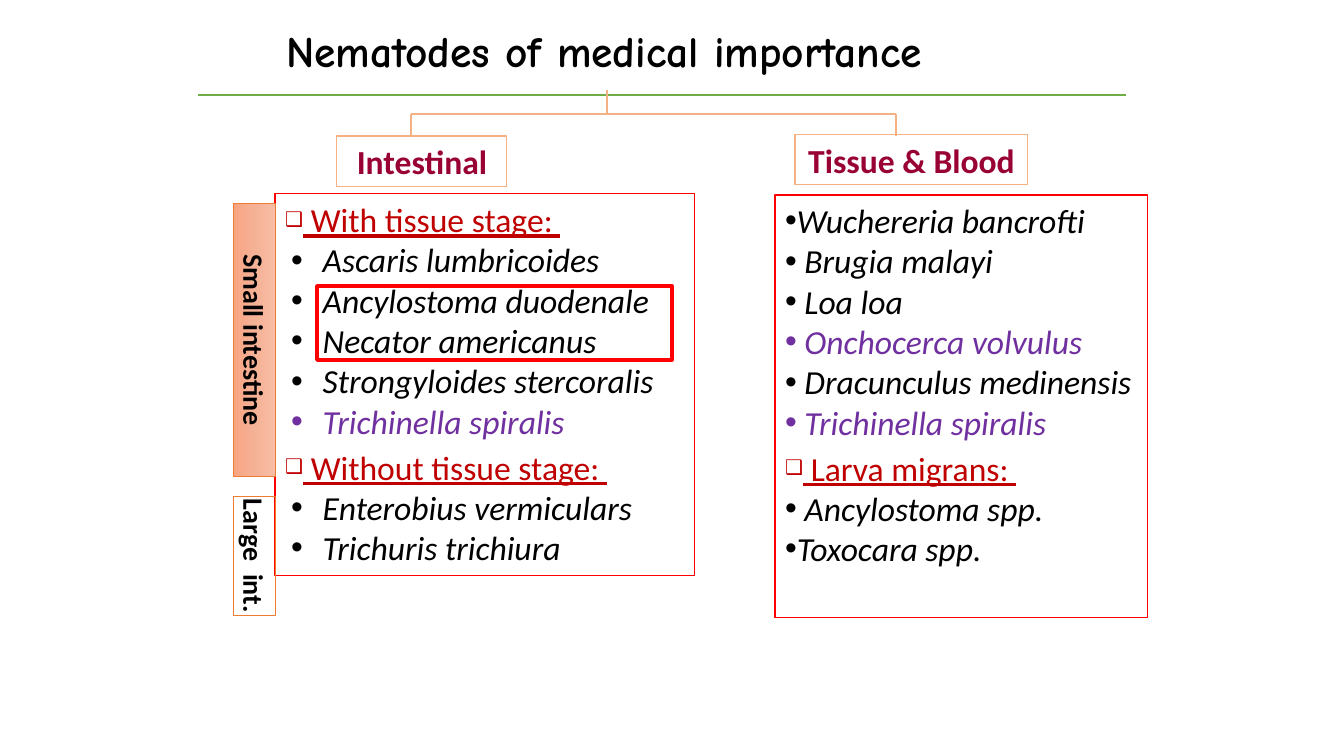
from copy import deepcopy
from dataclasses import dataclass
from typing import Any, NamedTuple

from lxml import etree
from pptx import Presentation, util as u
from pptx.dml.color import RGBColor
from pptx.enum import shapes, text
from pptx.oxml.ns import qn

BLACK = RGBColor(0x00, 0x00, 0x00)
RED = RGBColor(0xFF, 0x00, 0x00)
DARK_RED = RGBColor(0xC0, 0x00, 0x00)
MAROON = RGBColor(0x99, 0x00, 0x33)
PURPLE = RGBColor(0x70, 0x30, 0xA0)
GREEN = RGBColor(0x70, 0xAD, 0x47)
PEACH = RGBColor(0xF4, 0xB1, 0x83)
ORANGE = RGBColor(0xED, 0x7D, 0x31)
SITE_GRADIENT = [
    (0, RGBColor(0xF7, 0xBD, 0xA5)),
    (0.5, RGBColor(0xF5, 0xB1, 0x96)),
    (1, RGBColor(0xF8, 0xA5, 0x82)),
]
EMU_PER_PX = 914400 / 100.8


class Rect(NamedTuple):
    left: int
    top: int
    width: int
    height: int


class Line(NamedTuple):
    x1: int
    y1: int
    x2: int
    y2: int
    color: RGBColor = PEACH
    weight: float = 2


@dataclass
class Box:
    rect: Rect
    line: RGBColor
    weight: float
    label: str = ""
    size: int = 24
    color: RGBColor = BLACK
    rotation: int = 0
    gradient: bool = False


@dataclass
class Item:
    label: str
    color: RGBColor = BLACK
    heading: bool = False


@dataclass
class SpeciesList:
    idx: int
    rect: Rect
    items: list[Item]
    margin: int = 0
    indent: int = 0


LINES = [
    Line(198, 95, 1126, 95, GREEN, 1),
    Line(411, 114, 896, 114),
    Line(411, 114, 411, 136),
    Line(896, 114, 896, 136),
    Line(607, 90, 607, 114),
]
BOXES = [
    Box(Rect(337, 136, 170, 51), PEACH, 0.75, "Intestinal", color=MAROON),
    Box(Rect(795, 135, 233, 50), PEACH, 0.75, "Tissue & Blood", color=MAROON),
    Box(Rect(118, 319, 273, 42), ORANGE, 0.5, "Small intestine", 20,
        rotation=90, gradient=True),
    Box(Rect(195, 535, 119, 42), ORANGE, 1.25, "Large  int.", 20, rotation=90),
    Box(Rect(317, 286, 355, 74), RED, 2.5),
]
LISTS = [
    SpeciesList(1, Rect(275, 194, 420, 382), [
        Item(" With tissue stage: ", DARK_RED, True),
        Item(" Ascaris lumbricoides"),
        Item(" Ancylostoma duodenale"),
        Item(" Necator americanus"),
        Item(" Strongyloides stercoralis"),
        Item(" Trichinella spiralis", PURPLE),
        Item(" Without tissue stage: ", DARK_RED, True),
        Item(" Enterobius vermiculars"),
        Item(" Trichuris trichiura"),
    ], margin=30, indent=-24),
    SpeciesList(2, Rect(775, 195, 373, 423), [
        Item("Wuchereria bancrofti"),
        Item(" Brugia malayi"),
        Item(" Loa loa"),
        Item(" Onchocerca volvulus", PURPLE),
        Item(" Dracunculus medinensis"),
        Item(" Trichinella spiralis", PURPLE),
        Item(" Larva migrans: ", DARK_RED, True),
        Item(" Ancylostoma spp."),
        Item("Toxocara spp."),
    ]),
]


def px(value: int) -> int:
    return u.Emu(round(value * EMU_PER_PX))


def set_all(target: Any, values: dict[str, Any]) -> None:
    for name, value in values.items():
        setattr(target, name, value)


def place(sp: Any, rect: Rect) -> None:
    set_all(sp, {name: px(v) for name, v in rect._asdict().items()})


def outline(sp: Any, color: RGBColor, weight: float) -> None:
    sp.line.color.rgb = color
    sp.line.width = u.Pt(weight)


def add_run(p: Any, label: str, color: RGBColor, fmt: dict[str, Any]) -> None:
    r = p.add_run()
    r.text = label
    set_all(r.font, fmt)
    r.font.color.rgb = color


def add_line(s: Any, line: Line) -> None:
    cn = s.shapes.add_connector(shapes.MSO_CONNECTOR.STRAIGHT,
                                *map(px, line[:4]))
    outline(cn, line.color, line.weight)
    etree.SubElement(cn._element.spPr, qn("a:effectLst"))


def fill_gradient(sp: Any) -> None:
    sp.fill.gradient()
    sp.fill.gradient_angle = 270
    first = sp.fill._xPr.find(qn("a:gradFill")).find(qn("a:gsLst"))[0]
    first.addnext(deepcopy(first))
    for stop, (position, color) in zip(sp.fill.gradient_stops, SITE_GRADIENT):
        stop.position = position
        stop.color.rgb = color


def add_box(s: Any, box: Box) -> None:
    sp = s.shapes.add_shape(shapes.MSO_SHAPE.RECTANGLE, *map(px, box.rect))
    sp.shadow.inherit = False
    sp.rotation = box.rotation
    if box.gradient:
        fill_gradient(sp)
    else:
        sp.fill.background()
    outline(sp, box.line, box.weight)
    if box.label:
        tf = sp.text_frame
        set_all(tf, {"word_wrap": False, "margin_left": px(1),
                     "margin_right": px(1), "margin_top": px(4),
                     "margin_bottom": px(4),
                     "vertical_anchor": text.MSO_ANCHOR.MIDDLE})
        p = tf.paragraphs[0]
        p.alignment = text.PP_ALIGN.CENTER
        add_run(p, box.label, box.color,
                {"name": "Calibri", "size": u.Pt(box.size), "bold": True})


def set_bullet(p: Any, heading: bool, margin: int, indent: int) -> None:
    pPr = p._p.get_or_add_pPr()
    pPr.set("marL", str(px(margin)))
    pPr.set("indent", str(px(indent)))
    if heading:
        etree.SubElement(pPr, qn("a:buSzPct"), val="60000")
    etree.SubElement(pPr, qn("a:buFont"), typeface="Arial")
    etree.SubElement(pPr, qn("a:buChar"), char="❑" if heading else "•")


def fill_list(s: Any, species: SpeciesList) -> None:
    sp = s.placeholders[species.idx]
    place(sp, species.rect)
    outline(sp, RED, 0.75)
    tf = sp.text_frame
    set_all(tf, {"word_wrap": True, "auto_size": text.MSO_AUTO_SIZE.NONE})
    for i, item in enumerate(species.items):
        p = tf.add_paragraph() if i else tf.paragraphs[0]
        p.space_before = u.Pt(4 if i and item.heading else 0)
        margin, indent = (0, 0) if item.heading else (species.margin, species.indent)
        set_bullet(p, item.heading, margin, indent)
        add_run(p, item.label, item.color,
                {"name": "Calibri", "size": u.Pt(24),
                 "italic": not item.heading, "underline": item.heading})


def fill_title(s: Any) -> None:
    sp = s.shapes.title
    place(sp, Rect(276, 19, 761, 62))
    tf = sp.text_frame
    set_all(tf, {"word_wrap": True, "auto_size": text.MSO_AUTO_SIZE.NONE,
                 "vertical_anchor": text.MSO_ANCHOR.TOP})
    p = tf.paragraphs[0]
    p.alignment = text.PP_ALIGN.LEFT
    add_run(p, "Nematodes of medical importance", BLACK,
            {"name": "Comic Neue", "size": u.Pt(31), "bold": True})


def main() -> None:
    prs = Presentation()
    set_all(prs, {"slide_width": px(1344), "slide_height": px(756)})
    s = prs.slides.add_slide(prs.slide_layouts[3])
    fill_title(s)
    for species in LISTS:
        fill_list(s, species)
    for line in LINES:
        add_line(s, line)
    for box in BOXES:
        add_box(s, box)
    prs.save("out.pptx")


if __name__ == "__main__":
    main()
